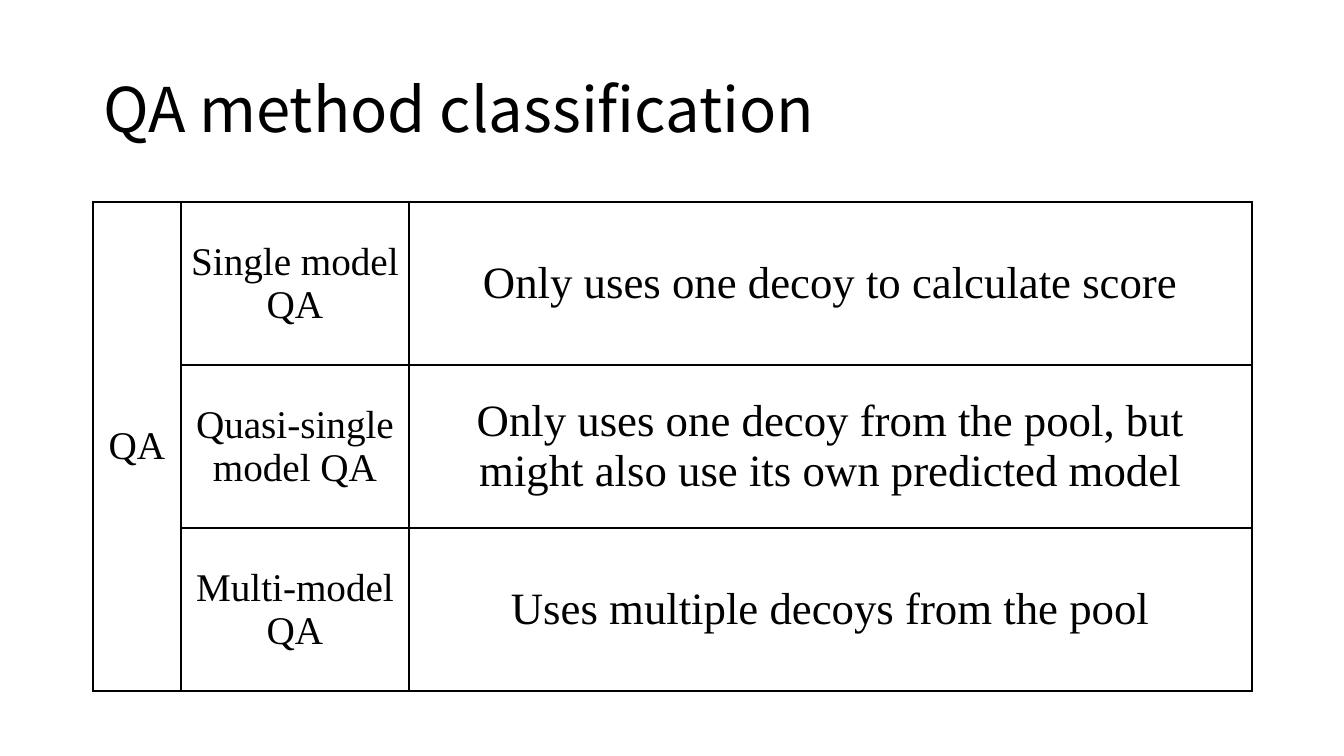
from lxml import etree
from pptx import Presentation
from pptx.dml.color import RGBColor
from pptx.enum.text import MSO_ANCHOR, PP_ALIGN
from pptx.oxml.ns import qn
from pptx.util import Pt

MIDDLE = MSO_ANCHOR.MIDDLE
LEFT, CENTER = PP_ALIGN.LEFT, PP_ALIGN.CENTER
PX = 914400 / 100.8
COLORS = {"text": "000000", "border": "000000"}
TITLE_FORMAT = {"name": "Noto Sans CJK SC", "size": Pt(44), "bold": False}
LABEL_FORMAT = {"name": "Times New Roman", "size": Pt(28), "bold": False}
DETAIL_FORMAT = {**LABEL_FORMAT, "size": Pt(32)}

METHODS = [
    ("Single model QA", "Only uses one decoy to calculate score"),
    ("Quasi-single model QA",
     "Only uses one decoy from the pool, but might also use its own predicted model"),
    ("Multi-model QA", "Uses multiple decoys from the pool"),
]


def px(n):
    return round(n * PX)


class SlideBuilder:
    def __init__(self, prs):
        self.s = prs.slides.add_slide(prs.slide_layouts[5])

    def add_text(self, tf, text, fmt, align):
        p = tf.paragraphs[0]
        p.alignment = align
        r = p.add_run()
        r.text = text
        for name, value in fmt.items():
            setattr(r.font, name, value)
        r.font.color.rgb = RGBColor.from_string(COLORS["text"])
        return p

    def title(self, text, x, y, w, h):
        sp = self.s.shapes.title
        sp.left, sp.top, sp.width, sp.height = map(px, (x, y, w, h))
        tf = sp.text_frame
        tf.word_wrap = True
        tf.vertical_anchor = MIDDLE
        self.add_text(tf, text, TITLE_FORMAT, LEFT).line_spacing = 0.9

    def border(self, cell):
        tcPr = cell._tc.get_or_add_tcPr()
        for i, side in enumerate(("a:lnL", "a:lnR", "a:lnT", "a:lnB")):
            ln = etree.Element(qn(side), w=str(Pt(1)))
            fill = etree.SubElement(ln, qn("a:solidFill"))
            etree.SubElement(fill, qn("a:srgbClr"), val=COLORS["border"])
            tcPr.insert(i, ln)

    def cell(self, cell, text, fmt):
        cell.vertical_anchor = MIDDLE
        self.add_text(cell.text_frame, text, fmt, CENTER)

    def table(self, group, rows, x, y, widths, row_h):
        box = map(px, (x, y, sum(widths), row_h * len(rows)))
        table = self.s.shapes.add_table(len(rows), len(widths), *box).table
        table.first_row = table.horz_banding = False
        for column, w in zip(table.columns, widths):
            column.width = px(w)
        for row in table.rows:
            row.height = px(row_h)
        for cell in table.iter_cells():
            cell.fill.background()
            self.border(cell)
        # Group label spans every row
        table.cell(0, 0).merge(table.cell(len(rows) - 1, 0))
        self.cell(table.cell(0, 0), group, LABEL_FORMAT)
        for i, (label, detail) in enumerate(rows):
            self.cell(table.cell(i, 1), label, LABEL_FORMAT)
            self.cell(table.cell(i, 2), detail, DETAIL_FORMAT)


def main():
    prs = Presentation()
    prs.slide_width, prs.slide_height = px(1344), px(756)
    slide = SlideBuilder(prs)

    # Heading
    slide.title("QA method classification", 93, 40, 1159, 146)

    # Classification table
    slide.table("QA", METHODS, 93, 202, (88, 228, 843), 163)

    prs.save("out.pptx")


if __name__ == "__main__":
    main()
